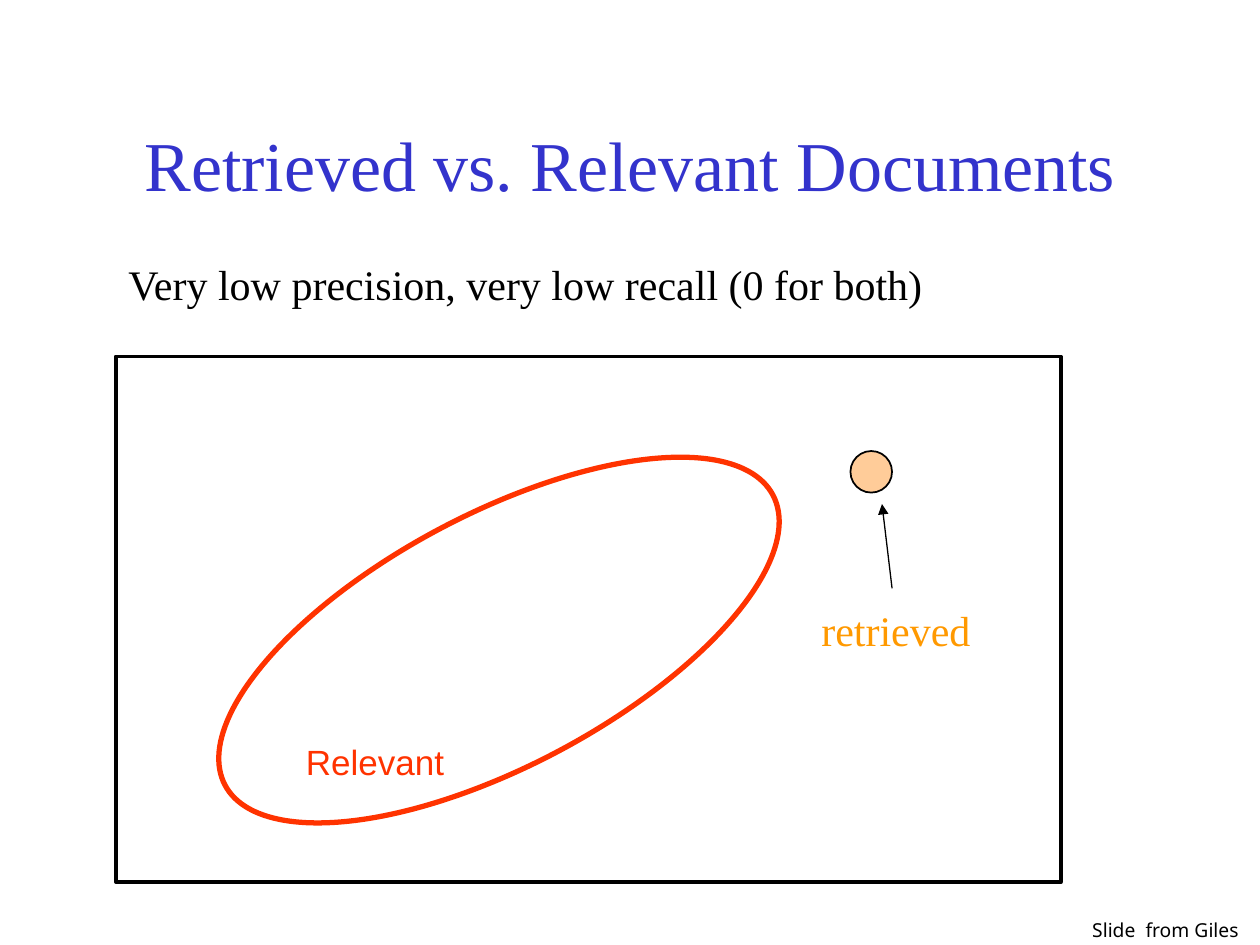
"""Build the slide on retrieved versus relevant documents."""
from lxml import etree
from pptx import Presentation
from pptx.dml.color import RGBColor
from pptx.enum.shapes import MSO_CONNECTOR, MSO_SHAPE
from pptx.enum.text import MSO_ANCHOR, PP_ALIGN
from pptx.oxml.ns import qn
from pptx.util import Inches, Pt

RECT, OVAL = MSO_SHAPE.RECTANGLE, MSO_SHAPE.OVAL
STRAIGHT = MSO_CONNECTOR.STRAIGHT
TOP, MIDDLE = MSO_ANCHOR.TOP, MSO_ANCHOR.MIDDLE
LEFT, CENTER = PP_ALIGN.LEFT, PP_ALIGN.CENTER

BLACK = RGBColor(0x00, 0x00, 0x00)
BLUE = RGBColor(0x33, 0x33, 0xCC)
RED = RGBColor(0xFF, 0x33, 0x00)
ORANGE = RGBColor(0xFF, 0x99, 0x00)
PEACH = RGBColor(0xFF, 0xCC, 0x99)
SERIF, SANS, NOTE = "Times New Roman", "Arial", "Noto Sans"


def add_text(s, text, box, size, font, color, wrap=False, align=LEFT, anchor=TOP):
    tb = s.shapes.add_textbox(*map(Inches, box))
    tf = tb.text_frame
    tf.word_wrap = wrap
    tf.vertical_anchor = anchor
    p = tf.paragraphs[0]
    p.text = text
    p.alignment = align
    p.font.size = Pt(size)
    p.font.name = font
    p.font.color.rgb = color


def add_outline(s, kind, box, color, width, fill=None, rotation=0):
    sp = s.shapes.add_shape(kind, *map(Inches, box))
    sp.shadow.inherit = False
    sp.rotation = rotation
    sp.line.color.rgb = color
    sp.line.width = Pt(width)
    if fill is None:
        sp.fill.background()
    else:
        sp.fill.solid()
        sp.fill.fore_color.rgb = fill


def add_arrow(s, start, end, color, width):
    cn = s.shapes.add_connector(STRAIGHT, *map(Inches, start + end))
    cn.line.color.rgb = color
    cn.line.width = Pt(width)
    etree.SubElement(cn.line._get_or_add_ln(), qn("a:tailEnd"), type="triangle")
    etree.SubElement(cn._element.spPr, qn("a:effectLst"))


def main():
    prs = Presentation()
    prs.slide_width, prs.slide_height = Inches(10), Inches(7.5)
    s = prs.slides.add_slide(prs.slide_layouts[6])

    add_text(s, "Retrieved vs. Relevant Documents", (0.75, 0.67, 8.5, 1.25),
             40, SERIF, BLUE, wrap=True, align=CENTER, anchor=MIDDLE)
    add_outline(s, OVAL, (1.5, 4.08, 4.92, 2), RED, 3, rotation=332.1)
    add_text(s, "Relevant", (2.33, 5.83, 1.3, 0.43), 20, SANS, RED)
    add_outline(s, OVAL, (6.75, 3.58, 0.33, 0.33), BLACK, 1, fill=PEACH)
    add_text(s, "Very low precision, very low recall (0 for both)",
             (0.92, 2, 6.54, 0.5), 24, SERIF, BLACK)
    add_outline(s, RECT, (0.92, 2.83, 7.5, 4.17), BLACK, 2.25)
    add_text(s, "retrieved", (6.42, 4.75, 1.39, 0.5), 24, SERIF, ORANGE)
    add_arrow(s, (7.08, 4.67), (7, 4), BLACK, 0.75)
    add_text(s, "Slide  from Giles", (8.57, 7.24, 1.42, 0.29), 11, NOTE, BLACK)

    prs.save("out.pptx")


if __name__ == "__main__":
    main()
